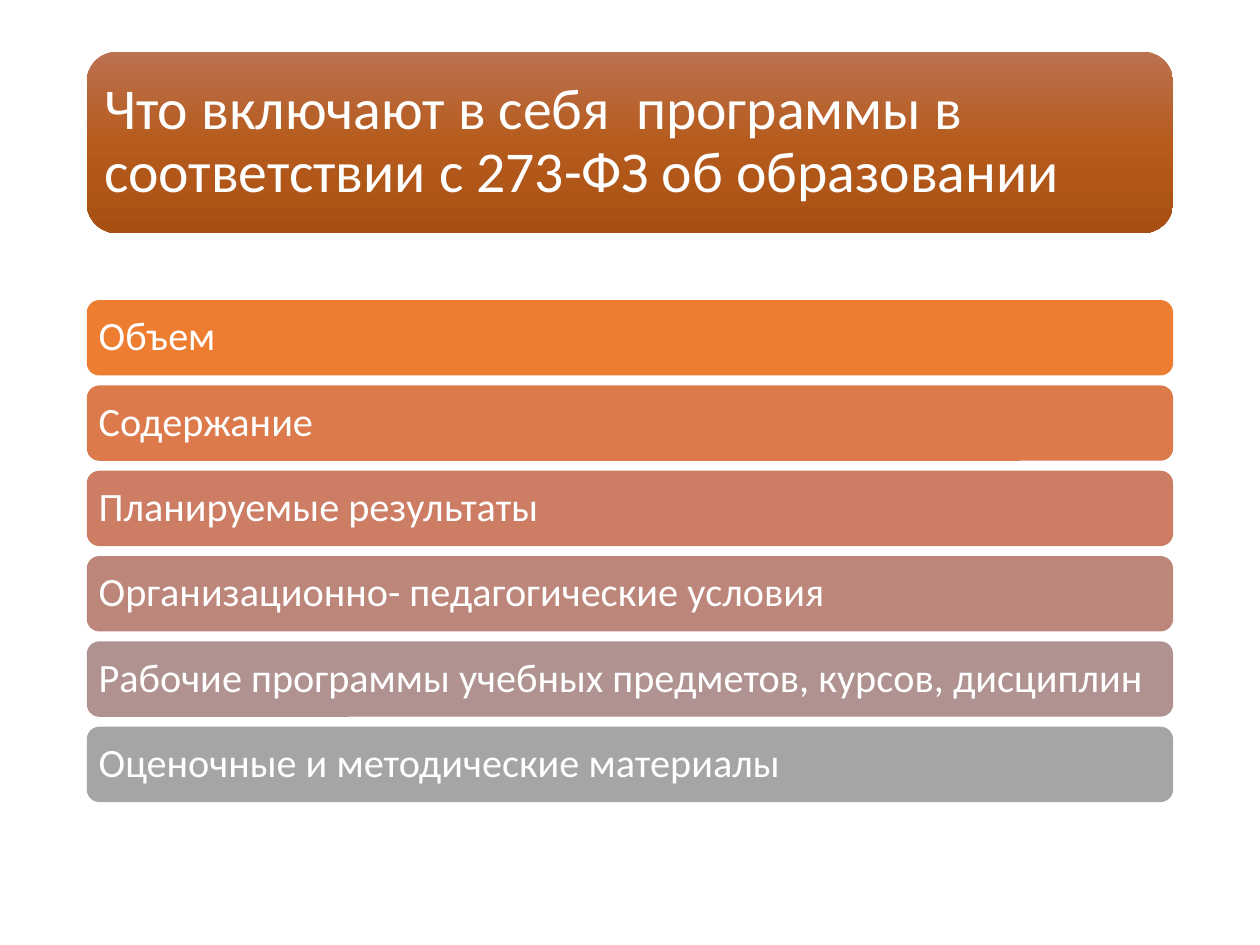
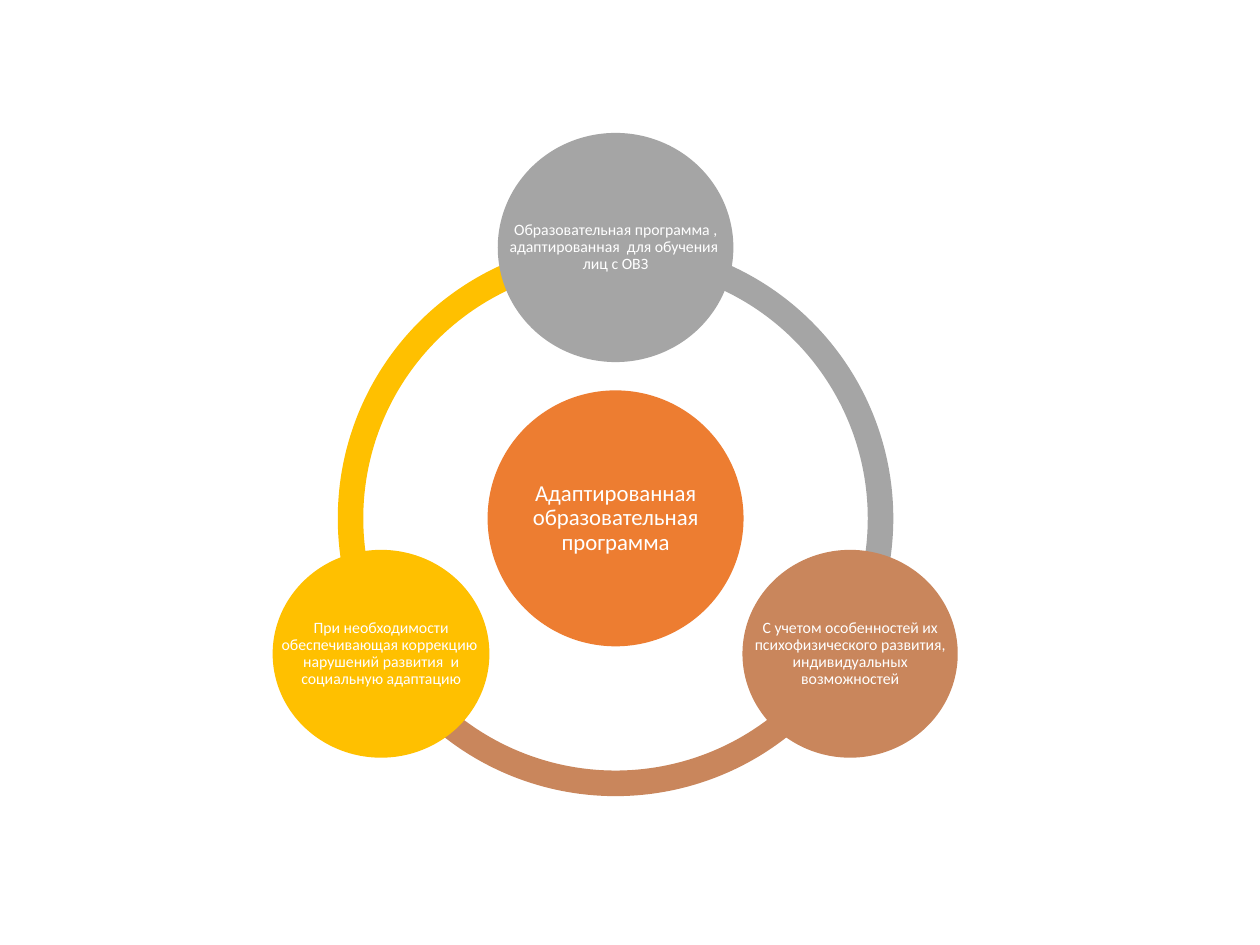
"""Build two slides on what educational programmes include."""
from copy import deepcopy
from math import cos, radians, sin

from pptx import Presentation
from pptx.dml.color import RGBColor as RGB
from pptx.enum.shapes import MSO_SHAPE as Kind
from pptx.enum.text import MSO_ANCHOR as Anchor, PP_ALIGN as Align
from pptx.oxml.ns import qn
from pptx.util import Cm, Pt

FONT = "Calibri"
HUES = {
    "white": "FFFFFF", "orange": "ED7D31", "grey": "A5A5A5",
    "brown": "C9865C", "gold": "FFC000",
    "coral": "DC7A4B", "rose": "CC7D64", "dusk": "BD867B", "mauve": "B09391",
    "light": "BB7150", "rust": "B65B1D", "dark": "A85014",
}
TITLE = "Что включают в себя  программы в соответствии с 273-ФЗ об образовании"
BANNER = [(0, "light"), (0.5, "rust"), (1, "dark")]
ROWS = [
    ("Объем", "orange"),
    ("Содержание", "coral"),
    ("Планируемые результаты", "rose"),
    ("Организационно- педагогические условия", "dusk"),
    ("Рабочие программы учебных предметов, курсов, дисциплин", "mauve"),
    ("Оценочные и методические материалы", "grey"),
]
CORE = "Адаптированная образовательная программа"
NODES = [
    ("Образовательная программа , адаптированная  для обучения  лиц с ОВЗ",
     "grey", 270, (4.75, 4.62)),
    ("С учетом особенностей их психофизического развития, "
     "индивидуальных возможностей", "brown", 30, (4.34, 4.19)),
    ("При необходимости обеспечивающая коррекцию  нарушений развития  "
     "и социальную адаптацию", "gold", 150, (4.37, 4.19)),
]
LEFT, WIDE = 1.75, 21.9
ROW_TOP, ROW_STEP, ROW_HIGH = 6.05, 1.72, 1.52
MID_X, MID_Y = 12.41, 10.45
RING, ORBIT, HUB = 11.2, 5.46, 5.16


def tint(name):
    return RGB.from_string(HUES[name])


def draw(slide, kind, area, hue):
    shape = slide.shapes.add_shape(kind, *map(Cm, area))
    shape.shadow.inherit = False
    shape.line.fill.background()
    shape.fill.solid()
    shape.fill.fore_color.rgb = tint(hue)
    return shape


def label(slide, area, text, size, inset, align):
    frame = slide.shapes.add_textbox(*map(Cm, area)).text_frame
    frame.word_wrap = True
    frame.vertical_anchor = Anchor.MIDDLE
    frame.margin_left = frame.margin_right = Cm(inset)
    frame.margin_top = frame.margin_bottom = Cm(inset)
    para = frame.paragraphs[0]
    para.text = text
    para.alignment = align
    para.line_spacing = 0.9
    para.font.name = FONT
    para.font.size = Pt(size)
    para.font.color.rgb = tint("white")


def blend(shape, stops):
    fill = shape.fill
    fill.gradient()
    fill.gradient_angle = 270
    marks = shape._element.spPr.find(qn("a:gradFill")).find(qn("a:gsLst"))
    marks.insert(1, deepcopy(marks[0]))
    for stop, (place, hue) in zip(fill.gradient_stops, stops):
        stop.position = place
        stop.color.rgb = tint(hue)


def bar(slide, top, high, text, hue, size, inset):
    area = LEFT, top, WIDE, high
    shape = draw(slide, Kind.ROUNDED_RECTANGLE, area, hue)
    label(slide, area, text, size, inset, Align.LEFT)
    return shape


def around(x, y, wide, high):
    return x - wide / 2, y - high / 2, wide, high


def disc(slide, area, text, hue, size, inset):
    draw(slide, Kind.OVAL, area, hue)
    label(slide, area, text, size, inset, Align.CENTER)


def list_parts(slide):
    blend(bar(slide, 1.04, 3.66, TITLE, "rust", 33, 0.35), BANNER)
    for i, (text, hue) in enumerate(ROWS):
        bar(slide, ROW_TOP + i * ROW_STEP, ROW_HIGH, text, hue, 23, 0.24)


def draw_ring(slide):
    for _, hue, angle, _ in NODES:
        arc = draw(slide, Kind.BLOCK_ARC, around(MID_X, MID_Y, RING, RING), hue)
        ends = angle, (angle + 120) % 360
        arc.adjustments[0], arc.adjustments[1] = (end * 0.6 for end in ends)
        arc.adjustments[2] = 0.046
    disc(slide, around(MID_X, MID_Y, HUB, HUB), CORE, "orange", 13, 0.05)
    for text, hue, angle, size in NODES:
        x = MID_X + ORBIT * cos(radians(angle))
        y = MID_Y + ORBIT * sin(radians(angle))
        disc(slide, around(x, y, *size), text, hue, 9, 0.03)


def main():
    deck = Presentation()
    deck.slide_width, deck.slide_height = Cm(25.4), Cm(19.05)
    for build in (list_parts, draw_ring):
        build(deck.slides.add_slide(deck.slide_layouts[6]))
    deck.save("out.pptx")


if __name__ == "__main__":
    main()
